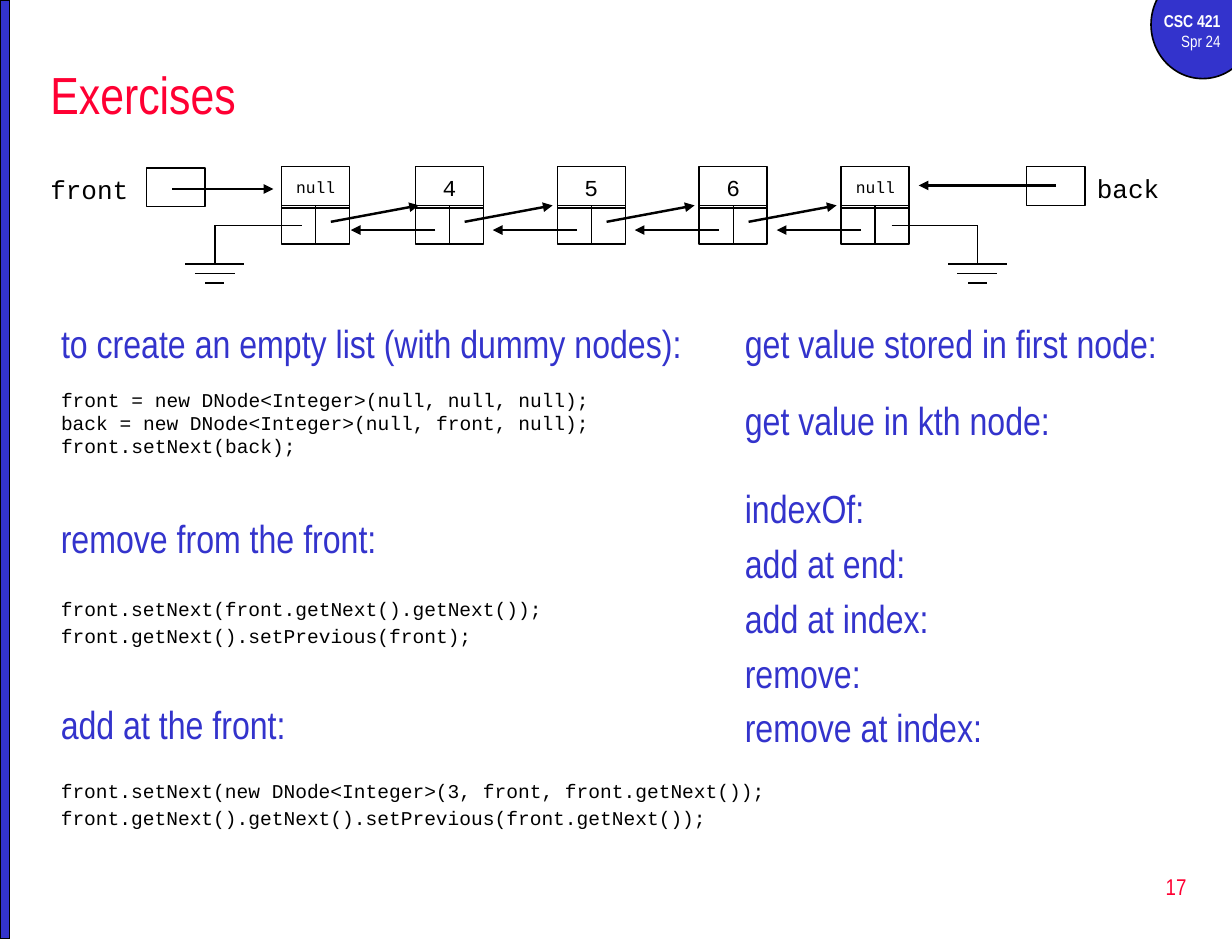
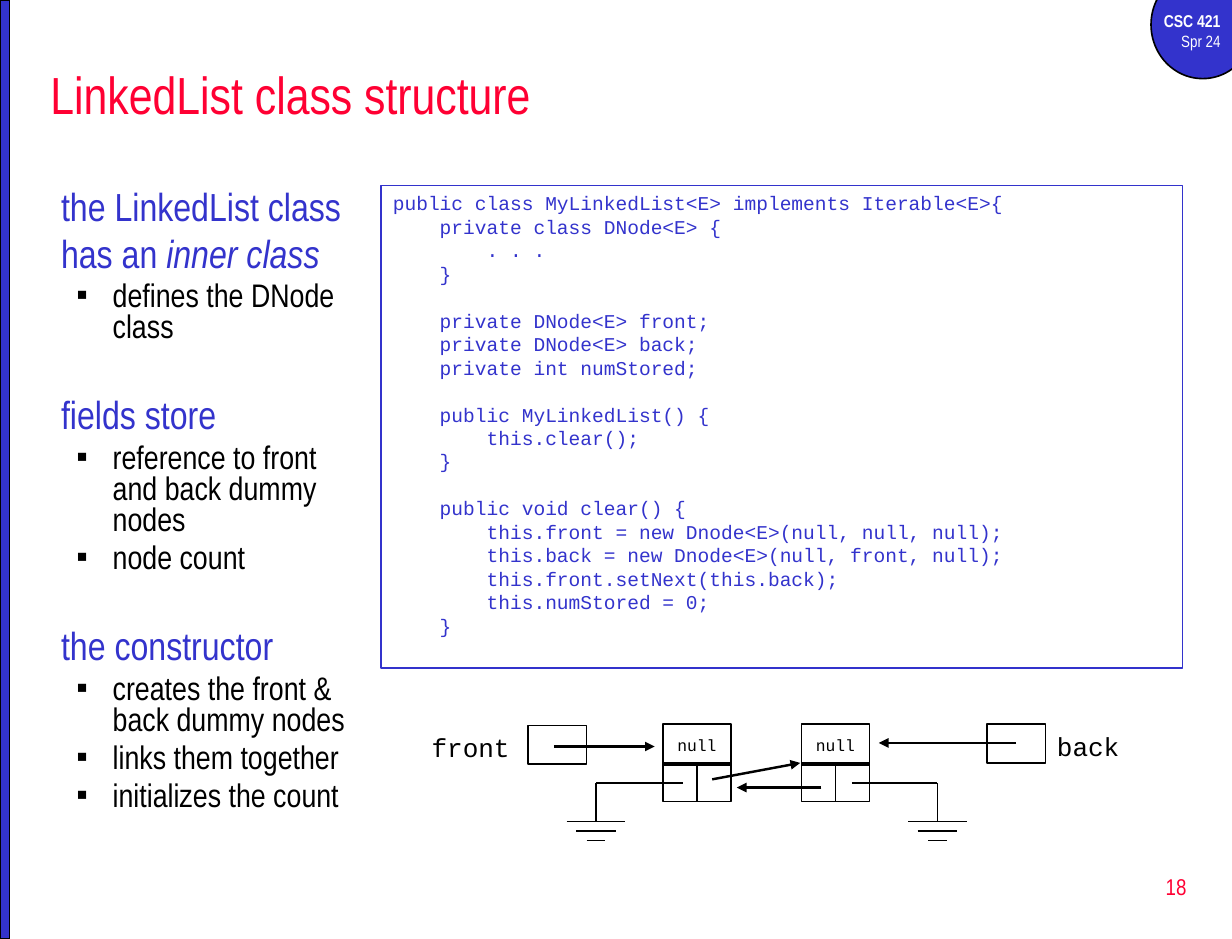
from lxml.etree import SubElement
from pptx import Presentation
from pptx.dml.color import RGBColor
from pptx.enum.shapes import MSO_CONNECTOR, MSO_SHAPE
from pptx.enum.text import MSO_ANCHOR, MSO_AUTO_SIZE, PP_ALIGN
from pptx.oxml.ns import qn
from pptx.util import Inches, Pt

BLUE = RGBColor(0x33, 0x33, 0xCC)
RED = RGBColor(0xFF, 0x00, 0x33)
BLACK = RGBColor(0x00, 0x00, 0x00)
WHITE = RGBColor(0xFF, 0xFF, 0xFF)
SANS = "Arial Narrow"
MONO = "Courier New"

NODE_W = 0.58
NODE_PITCH = 1.21
FIRST_NODE = 2.07

CLASS_CODE = """public class MyLinkedList<E> implements Iterable<E>{
    private class DNode<E> {
        . . .
    }

    private DNode<E> front;
    private DNode<E> back;
    private int numStored;

    public MyLinkedList() {
        this.clear();
    }

    public void clear() {
        this.front = new Dnode<E>(null, null, null);
        this.back = new Dnode<E>(null, front, null);
        this.front.setNext(this.back);
        this.numStored = 0;
    }"""

CLASS_NOTES = [
    ("the LinkedList class has an ", ["defines the DNode class"]),
    ("fields store", ["reference to front and back dummy nodes", "node count"]),
    ("the constructor", ["creates the front & back dummy nodes",
                         "links them together", "initializes the count"]),
]


def style_run(r, size, color, font=SANS, bold=False, italic=False):
    """Set the font of one run."""
    r.font.size, r.font.name = Pt(size), font
    r.font.color.rgb = color
    r.font.bold, r.font.italic = bold, italic


def add_line(tf, text, size, color, font=SANS, before=0, spacing=1.0,
             align=PP_ALIGN.LEFT, bold=False):
    """Add one formatted paragraph, using the empty first one if there is one."""
    p = tf.paragraphs[0] if not tf.text else tf.add_paragraph()
    p.text = text
    p.alignment, p.space_before, p.line_spacing = align, Pt(before), spacing
    style_run(p.runs[0], size, color, font, bold)
    return p


def set_bullet(p, char=None, indent=0, hanging=0):
    """Give a paragraph its indents and a bullet, or none."""
    pPr = p._p.get_or_add_pPr()
    pPr.set("marL", str(Inches(indent)))
    pPr.set("indent", str(-Inches(hanging)))
    if char:
        SubElement(pPr, qn("a:buChar")).set("char", char)
    else:
        SubElement(pPr, qn("a:buNone"))


def place(sp, left, top, width, height, anchor=MSO_ANCHOR.TOP):
    """Move a placeholder to its box and return its text frame."""
    sp.left, sp.top = Inches(left), Inches(top)
    sp.width, sp.height = Inches(width), Inches(height)
    tf = sp.text_frame
    tf.auto_size, tf.word_wrap = MSO_AUTO_SIZE.NONE, True
    tf.vertical_anchor = anchor
    return tf


def add_text(shapes, left, top, width, height, anchor=MSO_ANCHOR.TOP):
    """Add a wrapping text box and return its text frame."""
    sp = shapes.add_textbox(Inches(left), Inches(top), Inches(width), Inches(height))
    tf = sp.text_frame
    tf.word_wrap, tf.vertical_anchor = True, anchor
    return tf


def add_box(shapes, left, top, width, height, fill=None, line=BLACK,
            kind=MSO_SHAPE.RECTANGLE):
    """Add an outlined shape, hollow unless a fill is given."""
    sp = shapes.add_shape(kind, Inches(left), Inches(top), Inches(width), Inches(height))
    sp.shadow.inherit = False
    if fill is None:
        sp.fill.background()
    else:
        sp.fill.solid()
        sp.fill.fore_color.rgb = fill
    sp.line.color.rgb, sp.line.width = line, Pt(1)
    return sp


def add_link(shapes, x1, y1, x2, y2, arrow=False):
    """Add a thin black line, or a thicker arrow."""
    c = shapes.add_connector(MSO_CONNECTOR.STRAIGHT, Inches(x1), Inches(y1),
                             Inches(x2), Inches(y2))
    c.line.color.rgb, c.line.width = BLACK, Pt(1.5 if arrow else 1)
    spPr = c.element.spPr
    if arrow:
        SubElement(spPr.find(qn("a:ln")), qn("a:tailEnd")).set("type", "triangle")
    SubElement(spPr, qn("a:effectLst"))
    return c


def new_slide(prs, title, number):
    """Add a slide with the band, course badge, title and number."""
    s = prs.slides.add_slide(prs.slide_layouts[1])
    add_box(s.shapes, 0, 0, 0.08, 8, BLUE)
    add_box(s.shapes, 9.81, -0.25, 0.88, 0.92, BLUE, kind=MSO_SHAPE.OVAL)
    tf = add_text(s.shapes, 9.67, 0.04, 0.83, 0.46)
    add_line(tf, "CSC 421", 10.5, WHITE, align=PP_ALIGN.RIGHT, bold=True)
    add_line(tf, "Spr 24", 10, WHITE, align=PP_ALIGN.RIGHT)
    tf = place(s.shapes.title, 0.33, 0.42, 9.92, 0.75, MSO_ANCHOR.MIDDLE)
    add_line(tf, title, 32, RED)
    tf = add_text(s.shapes, 8.02, 7.29, 2.19, 0.53, MSO_ANCHOR.MIDDLE)
    add_line(tf, str(number), 14, RED, align=PP_ALIGN.RIGHT)
    return s


def add_node(shapes, left, top, value):
    """Draw a list node: a value cell over two link cells."""
    links = add_box(shapes, left, top + 0.33, NODE_W, 0.33)
    cell = add_box(shapes, left, top, NODE_W, 0.35)
    add_line(cell.text_frame, value, 10 if value == "null" else 14, BLACK, MONO,
             align=PP_ALIGN.CENTER)
    mid = left + NODE_W / 2
    divider = add_link(shapes, mid, top + 0.33, mid, top + 0.66)
    divider.begin_connect(links, 0)
    divider.end_connect(links, 2)


def add_ground(shapes, start, x, top):
    """Draw a null link that runs sideways and down to a ground symbol."""
    add_link(shapes, start, top, x, top)
    add_link(shapes, x, top, x, top + 0.33)
    for i, half in enumerate((0.25, 0.17, 0.08)):
        y = top + 0.33 + i * 0.08
        add_link(shapes, x - half, y, x + half, y)


def add_linked_list(s, left, top, values, first_gap):
    """Draw a doubly linked list with its front and back pointers."""
    shapes = s.shapes.add_group_shape().shapes
    first = left + FIRST_NODE
    xs = [first] + [first + first_gap + NODE_PITCH * i for i in range(len(values) - 1)]
    last = xs[-1]
    for x, value in zip(xs, values):
        add_node(shapes, x, top, value)
    for x, following in zip(xs, xs[1:]):
        add_link(shapes, x + 0.42, top + 0.47, x + 1.17, top + 0.33, arrow=True)
        add_link(shapes, following + 0.17, top + 0.54, following - 0.55, top + 0.54,
                 arrow=True)
    add_ground(shapes, first + 0.17, first - 0.57, top + 0.5)
    add_ground(shapes, last + 0.43, last + 1.16, top + 0.5)
    add_box(shapes, left + 0.92, top + 0.01, 0.5, 0.33)
    add_link(shapes, left + 1.14, top + 0.19, left + 2, top + 0.19, arrow=True)
    add_box(shapes, last + 1.58, top, 0.5, 0.33)
    add_link(shapes, last + 1.83, top + 0.16, last + 0.66, top + 0.16, arrow=True)
    for name, x, y in (("front", left, top + 0.01), ("back", last + 2.08, top)):
        add_line(add_text(shapes, x, y, 0.92, 0.37), name, 16, BLACK, MONO)


def add_exercise(tf, heading, code, gap, spacing=1.0):
    """Write a heading and, after a gap, its lines of code."""
    set_bullet(add_line(tf, heading, 24, BLUE, before=4.8, spacing=spacing))
    for i, line in enumerate(code):
        set_bullet(add_line(tf, line, 12, BLACK, MONO, 2.4 if i else gap, spacing))


def add_questions(s, left, top, width, height, questions):
    """Write a column of open questions."""
    tf = add_text(s.shapes, left, top, width, height)
    for question in questions:
        add_line(tf, question, 24, BLUE, before=4.8)


def add_class_notes(tf):
    """Write the headings and bullets that explain the class."""
    for i, (heading, points) in enumerate(CLASS_NOTES):
        p = add_line(tf, heading, 24, BLUE, before=28 if i else 4.8)
        set_bullet(p)
        if i == 0:
            r = p.add_run()
            r.text = "inner class"
            style_run(r, 24, BLUE, italic=True)
        for point in points:
            p = add_line(tf, point, 20, BLACK, before=4, spacing=0.8)
            p.level = 1
            set_bullet(p, "▪", 0.44, 0.31)


def add_code_box(s, left, top, width, height, code):
    """Draw a framed listing, with spacing where the code has a break."""
    tf = add_box(s.shapes, left, top, width, height, line=BLUE).text_frame
    tf.word_wrap, tf.vertical_anchor = True, MSO_ANCHOR.TOP
    for i, block in enumerate(code.split("\n\n")):
        for j, line in enumerate(block.split("\n")):
            add_line(tf, line, 12, BLUE, MONO, before=14.4 if i and not j else 0)


def exercises_slide(prs):
    """Build the slide of list exercises."""
    s = new_slide(prs, "Exercises", 17)
    add_linked_list(s, 0.33, 1.42, ["null", "4", "5", "6", "null"], 1.14)
    add_exercise(place(s.placeholders[1], 0.42, 2.75, 6.58, 1.33),
                 "to create an empty list (with dummy nodes):",
                 ["front = new DNode<Integer>(null, null, null);",
                  "back = new DNode<Integer>(null, front, null);",
                  "front.setNext(back);"], 16.3, 0.8)
    add_exercise(add_text(s.shapes, 0.42, 4.33, 4.58, 1.25),
                 "remove from the front:",
                 ["front.setNext(front.getNext().getNext());",
                  "front.getNext().setPrevious(front);"], 22)
    add_exercise(add_text(s.shapes, 0.42, 5.92, 6.5, 1.25),
                 "add at the front:",
                 ["front.setNext(new DNode<Integer>(3, front, front.getNext());",
                  "front.getNext().getNext().setPrevious(front.getNext());"], 19.2)
    add_questions(s, 6.25, 2.67, 3.92, 0.58, ["get value stored in first node:"])
    add_questions(s, 6.25, 3.33, 3.83, 0.67, ["get value in kth node:"])
    add_questions(s, 6.25, 4.08, 3.83, 2.42,
                  ["indexOf:", "add at end:", "add at index:", "remove:",
                   "remove at index:"])


def structure_slide(prs):
    """Build the slide on the structure of the class."""
    s = new_slide(prs, "LinkedList class structure", 18)
    add_class_notes(place(s.placeholders[1], 0.42, 1.5, 2.75, 5.92))
    add_code_box(s, 3.25, 1.58, 6.83, 4.11, CLASS_CODE)
    add_linked_list(s, 3.58, 6.17, ["null", "null"], 1.18)


def main():
    """Build and save the presentation."""
    prs = Presentation()
    prs.slide_width, prs.slide_height = Inches(10.5), Inches(8)
    exercises_slide(prs)
    structure_slide(prs)
    prs.save("out.pptx")


if __name__ == "__main__":
    main()
